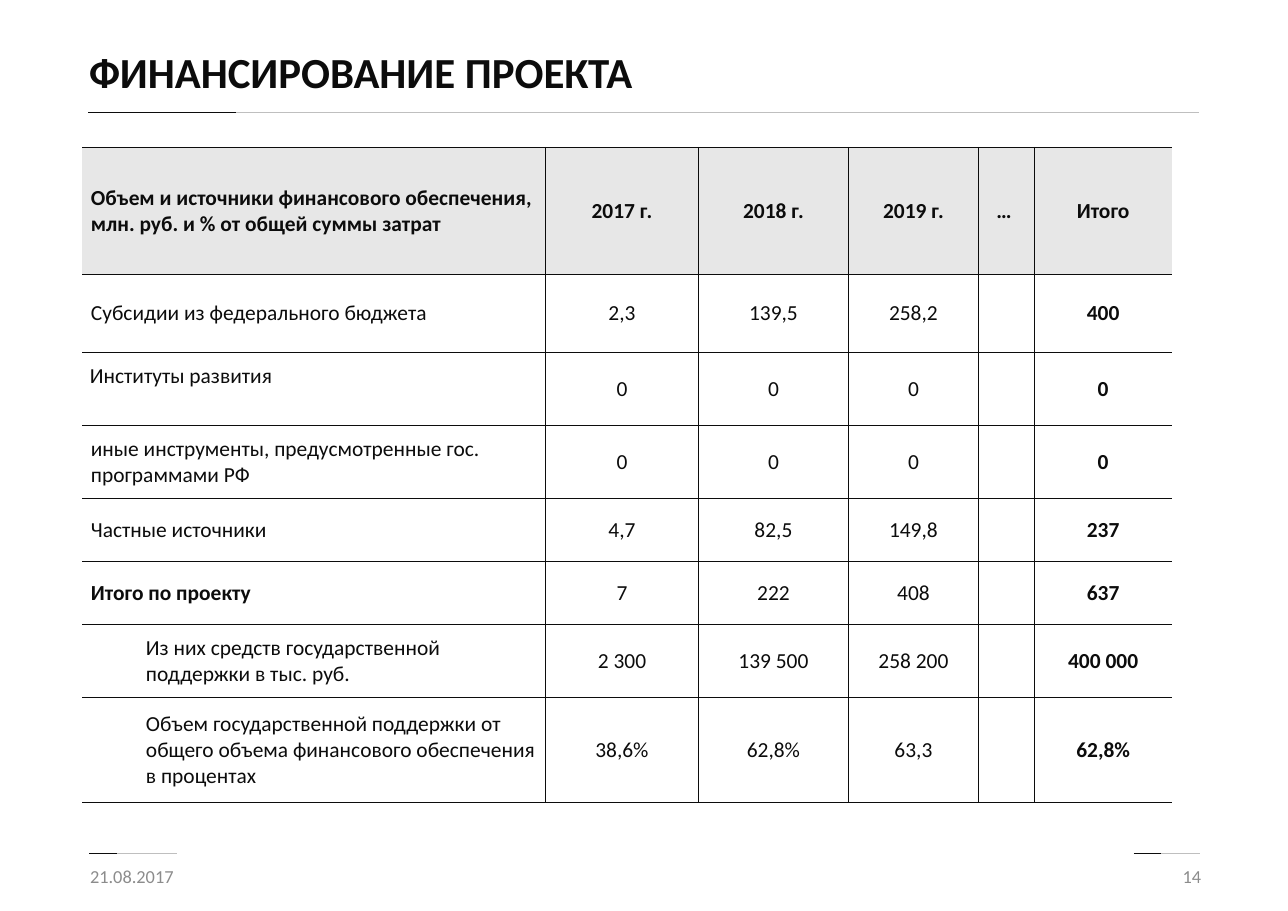
import pptx
import pptx.dml.color
import pptx.enum.shapes
import pptx.enum.text
import pptx.oxml.ns
import pptx.util
from lxml import etree

Pt = pptx.util.Pt
RGBColor = pptx.dml.color.RGBColor
ALIGN = pptx.enum.text.PP_ALIGN
MIDDLE = pptx.enum.text.MSO_ANCHOR.MIDDLE
qn = pptx.oxml.ns.qn

INK = RGBColor(0x0C, 0x0C, 0x0C)
RULE = RGBColor(0xBF, 0xBF, 0xBF)
MUTED = RGBColor(0x8C, 0x8C, 0x8C)
HEADER_FILL = RGBColor(0xE7, 0xE7, 0xE7)
FONT = "Calibri"

TITLE = "ФИНАНСИРОВАНИЕ ПРОЕКТА"
DATE, PAGE_NUMBER = "21.08.2017", "14"
FUNDING = [
    ("Объем и источники финансового обеспечения, млн. руб. и % от общей суммы затрат",
     "2017 г.", "2018 г.", "2019 г.", "… ", "Итого"),
    ("Субсидии из федерального бюджета", "2,3", "139,5", "258,2", "", "400"),
    ("Институты развития", "0", "0", "0", "", "0"),
    ("иные инструменты, предусмотренные гос. программами РФ", "0", "0", "0", "", "0"),
    ("Частные источники", "4,7", "82,5", "149,8", "", "237"),
    ("Итого по проекту", "7", "222", "408", "", "637"),
    ("Из них средств государственной поддержки в тыс. руб.",
     "2 300", "139 500", "258 200", "", "400 000"),
    ("Объем государственной поддержки от общего объема финансового обеспечения в процентах",
     "38,6%", "62,8%", "63,3", "", "62,8%"),
]
COLUMN_WIDTHS = [302.8, 100, 98, 85, 36.6, 89.8]
ROW_HEIGHTS = [83, 51, 47.7, 47.7, 41.2, 41.2, 47.7, 68.6]
HEADER_ROW, INSTITUTES_ROW, TOTAL_ROW = 0, 2, 5
TOTAL_COLUMN = len(COLUMN_WIDTHS) - 1

# Left, dark end, right, height on the page
RULES = [(57.6, 154.1, 783.4, 73.4), (740.9, 758.9, 784.1, 558), (58.3, 76.3, 115.9, 558)]


def style(para, size, color, bold=False, align=ALIGN.LEFT):
    para.alignment = align
    para.font.name = FONT
    para.font.size = Pt(size)
    para.font.bold = bold
    para.font.color.rgb = color


def add_text(page, text, left, top, width, height, *look):
    box = page.shapes.add_textbox(Pt(left), Pt(top), Pt(width), Pt(height))
    box.text_frame.word_wrap = True
    box.text_frame.vertical_anchor = MIDDLE
    para = box.text_frame.paragraphs[0]
    para.text = text
    style(para, *look)
    return para


def add_line(page, left, right, y, color):
    line = page.shapes.add_connector(
        pptx.enum.shapes.MSO_CONNECTOR.STRAIGHT, Pt(left), Pt(y), Pt(right), Pt(y))
    line.line.color.rgb = color
    line.line.width = Pt(0.5)
    etree.SubElement(line._element.spPr, qn("a:effectLst"))


def set_borders(cell, widths):
    """Give left, right, top and bottom widths in points; 0 means no line."""
    properties = cell._tc.get_or_add_tcPr()
    for index, (side, width) in enumerate(zip("LRTB", widths)):
        border = etree.Element(qn("a:ln" + side))
        properties.insert(index, border)
        if width:
            border.set("w", str(int(Pt(width))))
            fill = etree.SubElement(border, qn("a:solidFill"))
            etree.SubElement(fill, qn("a:srgbClr")).set("val", str(INK))
        else:
            etree.SubElement(border, qn("a:noFill"))


def fill_cell(cell, text, row, column):
    header, label = row == HEADER_ROW, column == 0
    cell.vertical_anchor = MIDDLE
    cell.margin_left = cell.margin_right = Pt(5)
    cell.margin_top = cell.margin_bottom = 0
    if header:
        cell.fill.solid()
        cell.fill.fore_color.rgb = HEADER_FILL
    else:
        cell.fill.background()

    para = cell.text_frame.paragraphs[0]
    para.text = text
    para.space_after = Pt(6)
    if label and row == INSTITUTES_ROW:
        cell.margin_bottom = Pt(17)
    elif label:
        indent = 36.7 if row > TOTAL_ROW else 0.7
        para._p.get_or_add_pPr().set("marL", str(int(Pt(indent))))
    bold = header or column == TOTAL_COLUMN or (label and row == TOTAL_ROW)
    style(para, 14, INK, bold, ALIGN.LEFT if label else ALIGN.CENTER)

    set_borders(cell, (0 if label else 0.75, 0 if column == TOTAL_COLUMN else 0.75,
                       1 if header else 0.75, 0.75))


def add_funding_table(page):
    table = page.shapes.add_table(
        len(FUNDING), len(COLUMN_WIDTHS), Pt(53.7), Pt(96.4),
        Pt(sum(COLUMN_WIDTHS)), Pt(sum(ROW_HEIGHTS))).table
    table.first_row = table.horz_banding = False
    for column, width in zip(table.columns, COLUMN_WIDTHS):
        column.width = Pt(width)
    for row, height in zip(table.rows, ROW_HEIGHTS):
        row.height = Pt(height)
    for row, texts in enumerate(FUNDING):
        for column, text in enumerate(texts):
            fill_cell(table.cell(row, column), text, row, column)


def main():
    deck = pptx.Presentation()
    deck.slide_width, deck.slide_height = Pt(841.68), Pt(595.44)
    page = deck.slides.add_slide(deck.slide_layouts[6])
    for left, dark_end, right, y in RULES:
        add_line(page, left, right, y, RULE)
        add_line(page, left, dark_end, y, INK)
    title = add_text(page, TITLE, 51.1, 20.2, 573.8, 57.6, 28, INK, True)
    title.line_spacing = 0.9
    add_text(page, DATE, 51.8, 556.6, 189.4, 31.7, 12, MUTED)
    add_text(page, PAGE_NUMBER, 602.6, 556.6, 189.4, 31.7, 12, MUTED, False, ALIGN.RIGHT)
    add_funding_table(page)
    deck.save("out.pptx")


if __name__ == "__main__":
    main()
